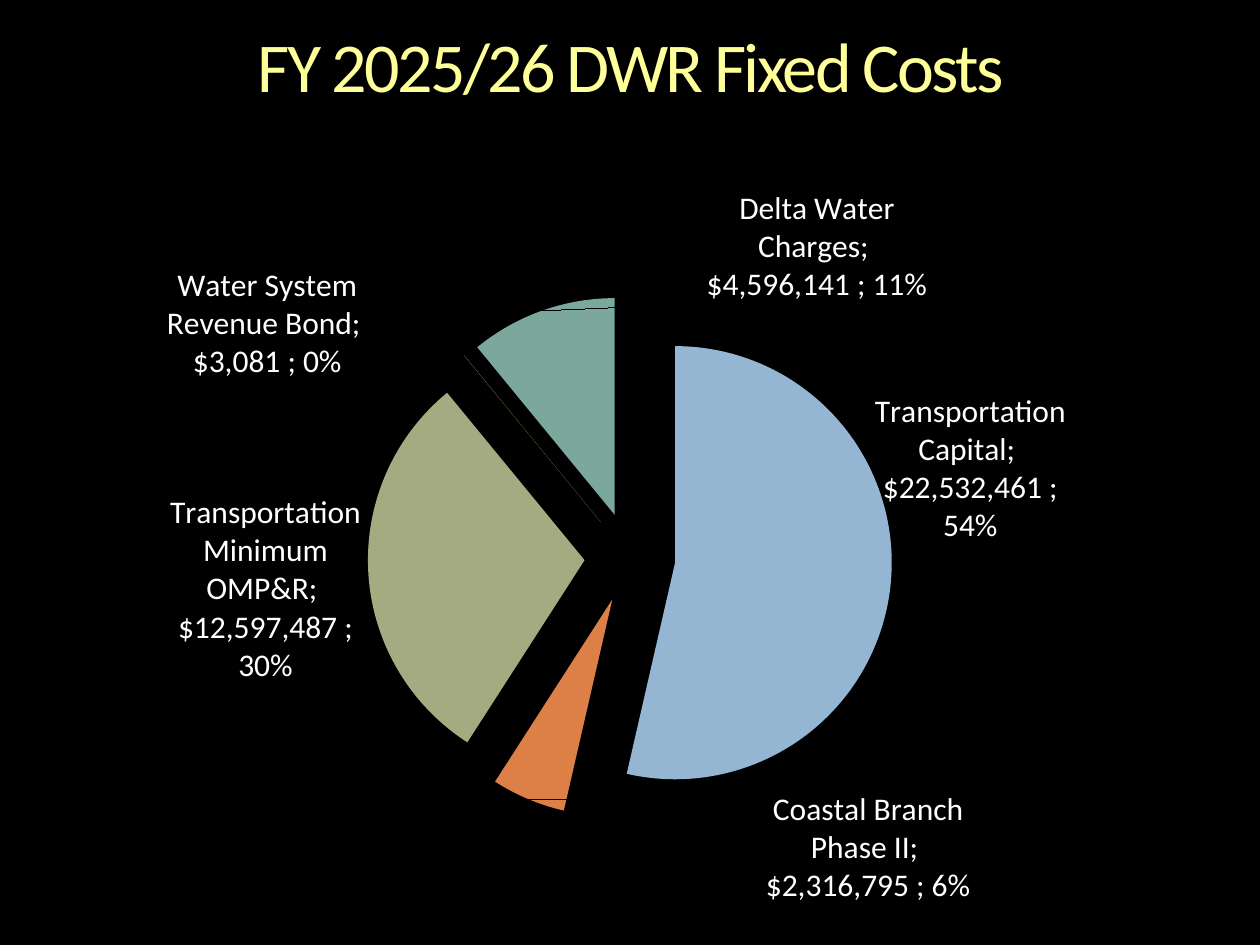
from lxml import etree
from pptx import Presentation
from pptx.chart.data import CategoryChartData
from pptx.dml.color import RGBColor
from pptx.enum import chart as ch, text
from pptx.oxml import parse_xml
from pptx.oxml.ns import nsdecls, qn
from pptx.util import Inches, Pt

BLACK = RGBColor(0, 0, 0)
WHITE = RGBColor(255, 255, 255)
YELLOW = RGBColor(0xFF, 0xFF, 0x99)
FONT = "Calibri"
MONEY = '_("$"* #,##0_);_("$"* \\(#,##0\\);_("$"* "-"??_);_(@_)'
TITLE = "FY 2025/26 DWR Fixed Costs"

# category, cost, slice colour, label shift as a share of the chart size
COSTS = [
    ("Transportation Capital", 22532461, "94B6D2", (-0.02, -0.25)),
    ("Coastal Branch Phase II", 2316795, "DD8047", (0.39, -0.02)),
    ("Transportation Minimum OMP&R", 12597487, "A5AB81", (0, 0.02)),
    ("Water System Revenue Bond", 3081, "D8B25C", (-0.08, 0.04)),
    ("Delta Water Charges", 4596141, "7BA79D", (0.34, 0)),
]
EXPLODE = 21
PLOT = {"x": 0.27, "y": 0.17, "w": 0.46, "h": 0.67}


def layout(vals, inner=False):
    """Manual chart layout holding the given x, y, w, h shares."""
    tags = ""
    if inner:
        tags = ('<c:layoutTarget val="inner"/>'
                '<c:xMode val="edge"/><c:yMode val="edge"/>')
    tags += "".join(f'<c:{k} val="{v}"/>' for k, v in vals.items())
    return parse_xml(f"<c:layout {nsdecls('c')}><c:manualLayout>{tags}"
                     "</c:manualLayout></c:layout>")


def show_all(node):
    """Turn on category, value and percentage in a label element."""
    for name in ("showVal", "showCatName", "showPercent"):
        node.find(qn("c:" + name)).set("val", "1")
    sep = etree.Element(qn("c:separator"))
    sep.text = "; "
    last = node.find(qn("c:showBubbleSize"))
    if last is None:
        last = node.find(qn("c:showPercent"))
    last.addnext(sep)


def style(font):
    font.name, font.size = FONT, Pt(18)
    font.color.rgb = WHITE


def add_title(slide):
    box = slide.shapes.title
    box.left, box.top = Inches(0.42), Inches(0.25)
    box.width, box.height = Inches(9.17), Inches(0.61)
    frame = box.text_frame
    frame.text = TITLE
    frame.margin_left = frame.margin_right = 0
    frame.margin_top = frame.margin_bottom = 0
    frame.vertical_anchor = text.MSO_ANCHOR.MIDDLE
    para = frame.paragraphs[0]
    para.alignment = text.PP_ALIGN.CENTER
    para.line_spacing = 0.9
    run = para.runs[0]
    run.font.name, run.font.size = FONT, Pt(40)
    run.font.color.rgb = YELLOW
    run.font._element.set("spc", "-150")


def add_pie(slide):
    data = CategoryChartData(number_format=MONEY)
    data.categories = [row[0] for row in COSTS]
    data.add_series("Series 1", [row[1] for row in COSTS])
    chart = slide.shapes.add_chart(
        ch.XL_CHART_TYPE.PIE, Inches(0.47), Inches(1.29),
        Inches(9.06), Inches(6.21), data).chart
    chart.has_title = chart.has_legend = False
    chart.font.name, chart.font.size = FONT, Pt(10)
    chart.font.color.rgb = WHITE

    plot = chart.plots[0]
    plot.vary_by_categories = True
    area = chart._chartSpace.find(".//" + qn("c:plotArea"))
    old = area.find(qn("c:layout"))
    if old is not None:
        area.remove(old)
    area.insert(0, layout(PLOT, inner=True))

    pie = plot.series[0]
    for i, (_, _, color, _) in enumerate(COSTS):
        point = pie.points[i]
        point.format.fill.solid()
        point.format.fill.fore_color.rgb = RGBColor.from_string(color)
        style(point.data_label.font)
        point.data_label.position = ch.XL_LABEL_POSITION.BEST_FIT
    burst = etree.Element(qn("c:explosion"), val=str(EXPLODE))
    pie._element.find(qn("c:dPt")).addprevious(burst)

    labels = pie.data_labels
    style(labels.font)
    labels.position = ch.XL_LABEL_POSITION.BEST_FIT
    group = pie._element.find(qn("c:dLbls"))
    show_all(group)
    for node, row in zip(group.findall(qn("c:dLbl")), COSTS):
        show_all(node)
        node.insert(1, layout(dict(zip("xy", row[3]))))


def main():
    deck = Presentation()
    deck.slide_width, deck.slide_height = Inches(10), Inches(7.5)
    slide = deck.slides.add_slide(deck.slide_layouts[5])
    slide.background.fill.solid()
    slide.background.fill.fore_color.rgb = BLACK
    add_title(slide)
    add_pie(slide)
    deck.save("out.pptx")


if __name__ == "__main__":
    main()
